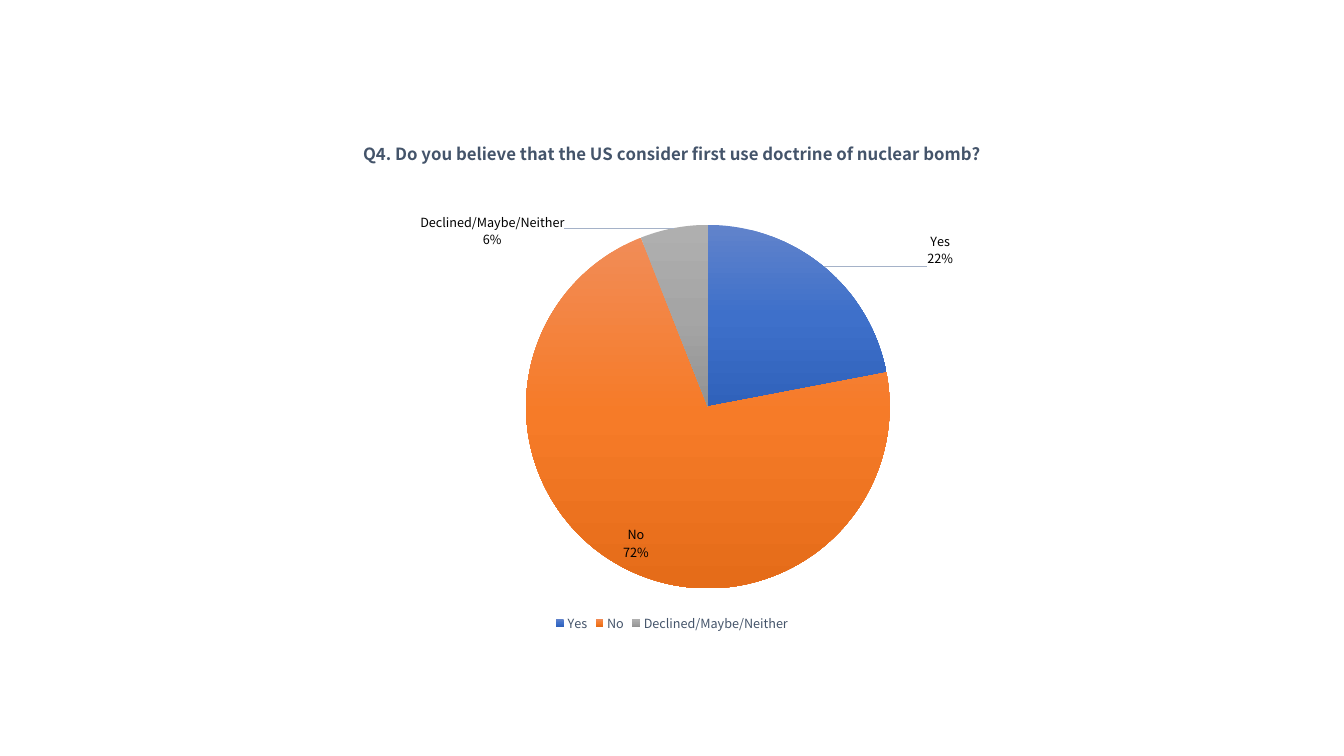
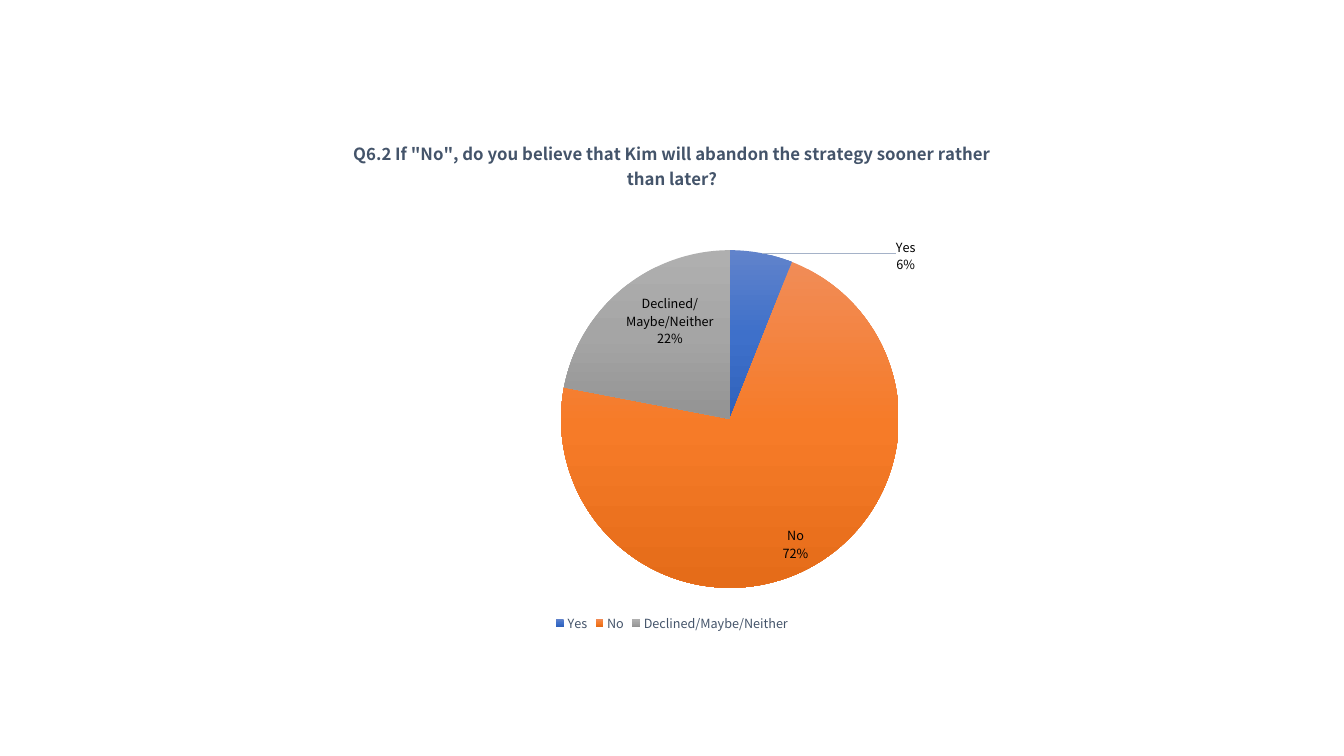
from copy import deepcopy

from pptx import Presentation
from pptx import util as u
from pptx.chart.data import CategoryChartData
from pptx.dml.color import RGBColor
from pptx.enum import chart as ch
from pptx.oxml import parse_xml
from pptx.oxml.ns import nsdecls

COLORS = {"text": "44546A", "label": "000000", "leader": "A5B2C8"}
GRADIENTS = {
    "Yes": ("6183CB", "3E70CA", "3062BB"),
    "No": ("F18C57", "F67B28", "E56C19"),
    "Declined/Maybe/Neither": ("AFAFAF", "A5A5A5", "939393"),
}
FONT = "Noto Sans CJK KR"
FORMATS = {
    "chart": {"size": u.Pt(10), "color": "label"},
    "title": {"size": u.Pt(12), "bold": True, "color": "text"},
    "legend": {"size": u.Pt(9), "bold": False, "color": "text"},
    "label": {"size": u.Pt(9), "bold": False, "color": "label"},
}
LABEL_SHOWS = {"show_value": False, "show_category_name": True, "show_percentage": True,
               "number_format": "0%", "number_format_is_linked": False,
               "position": ch.XL_LABEL_POSITION.INSIDE_END}

# Plot boxes and label offsets are fractions of the chart size
QUESTIONS = [
    {"title": "Q4. Do you believe that the US consider first use doctrine of nuclear bomb?",
     "shares": (22, 72, 6),
     "plot": {"x": 0.325, "y": 0.203, "w": 0.436, "h": 0.705},
     "outside": {0: {"x": 0.12, "y": 0.01}, 2: {"x": -0.13, "y": 0.05}}},
    {"title": 'Q6.2 If "No", do you believe that Kim will abandon the strategy '
              "sooner rather than later?",
     "shares": (6, 72, 22),
     "plot": {"x": 0.367, "y": 0.252, "w": 0.405, "h": 0.655},
     "outside": {0: {"x": 0.16, "y": 0.05}}},
]


def layout_xml(fractions, edge=False):
    modes = ""
    if edge:
        modes = '<c:layoutTarget val="inner"/><c:xMode val="edge"/><c:yMode val="edge"/>'
    values = "".join(f'<c:{key} val="{value}"/>' for key, value in fractions.items())
    return parse_xml(f'<c:layout {nsdecls("c")}><c:manualLayout>{modes}{values}'
                     "</c:manualLayout></c:layout>")


class SurveyDeck:
    """Holds the shared style and the current slide."""

    def __init__(self):
        self.prs = Presentation()
        self.prs.slide_width, self.prs.slide_height = u.Inches(13.33), u.Inches(7.5)
        self.slide = None

    def new_slide(self):
        self.slide = self.prs.slides.add_slide(self.prs.slide_layouts[6])

    def style(self, font, role):
        font.name = FONT
        for key, value in FORMATS[role].items():
            if key == "color":
                font.color.rgb = RGBColor.from_string(COLORS[value])
            else:
                setattr(font, key, value)

    def pie(self, question):
        data = CategoryChartData()
        data.categories = list(GRADIENTS)
        data.add_series(question["title"], question["shares"])
        chart = self.slide.shapes.add_chart(
            ch.XL_CHART_TYPE.PIE, u.Inches(2.53), u.Inches(1.19),
            u.Inches(8.27), u.Inches(5.12), data).chart
        self.style(chart.font, "chart")
        self.title(chart, question["title"])
        self.legend(chart)
        plot_area = chart.plots[0]._element.getparent()
        for automatic in plot_area.xpath("c:layout"):
            plot_area.remove(automatic)
        plot_area.insert(0, layout_xml(question["plot"], edge=True))
        series = chart.plots[0].series[0]
        chart.plots[0].vary_by_categories = True
        self.slices(series)
        self.labels(series, question["outside"])

    def title(self, chart, wording):
        chart.has_title = True
        chart.chart_title.include_in_layout = False
        frame = chart.chart_title.text_frame
        # An em space sets the question number apart
        frame.text = wording.replace(" ", " ", 1)
        self.style(frame.paragraphs[0].runs[0].font, "title")

    def legend(self, chart):
        chart.has_legend = True
        chart.legend.position = ch.XL_LEGEND_POSITION.BOTTOM
        chart.legend.include_in_layout = False
        self.style(chart.legend.font, "legend")

    def slices(self, series):
        for index, shades in enumerate(GRADIENTS.values()):
            fill = series.points[index].format.fill
            fill.gradient()
            fill.gradient_angle = 270
            stop_list = series._element.xpath(f'c:dPt[c:idx/@val="{index}"]//a:gsLst')[0]
            stop_list.append(deepcopy(stop_list[-1]))
            for stop, shade, position in zip(fill.gradient_stops, shades, (0, 0.5, 1)):
                stop.color.rgb = RGBColor.from_string(shade)
                stop.position = position

    def labels(self, series, outside):
        labels = series.data_labels
        for key, value in LABEL_SHOWS.items():
            setattr(labels, key, value)
        self.style(labels.font, "label")
        # Labels pulled away from their slices
        for index, offset in outside.items():
            label = series.points[index].data_label
            self.style(label.font, "label")
            label.position = ch.XL_LABEL_POSITION.OUTSIDE_END
            entry = series._element.xpath(f'c:dLbls/c:dLbl[c:idx/@val="{index}"]')[0]
            entry.insert(1, layout_xml(offset))
            for tag, shown in (("showVal", "0"), ("showCatName", "1"), ("showPercent", "1")):
                entry.xpath(f"c:{tag}")[0].set("val", shown)
        # Leader lines
        for switch in series._element.xpath("c:dLbls/c:showLeaderLines"):
            switch.set("val", "1")
            switch.addnext(parse_xml(
                f'<c:leaderLines {nsdecls("c", "a")}><c:spPr><a:ln w="9525"><a:solidFill>'
                f'<a:srgbClr val="{COLORS["leader"]}"/></a:solidFill></a:ln></c:spPr>'
                "</c:leaderLines>"))


def main():
    deck = SurveyDeck()
    for question in QUESTIONS:
        deck.new_slide()
        deck.pie(question)
    deck.prs.save("out.pptx")


if __name__ == "__main__":
    main()
